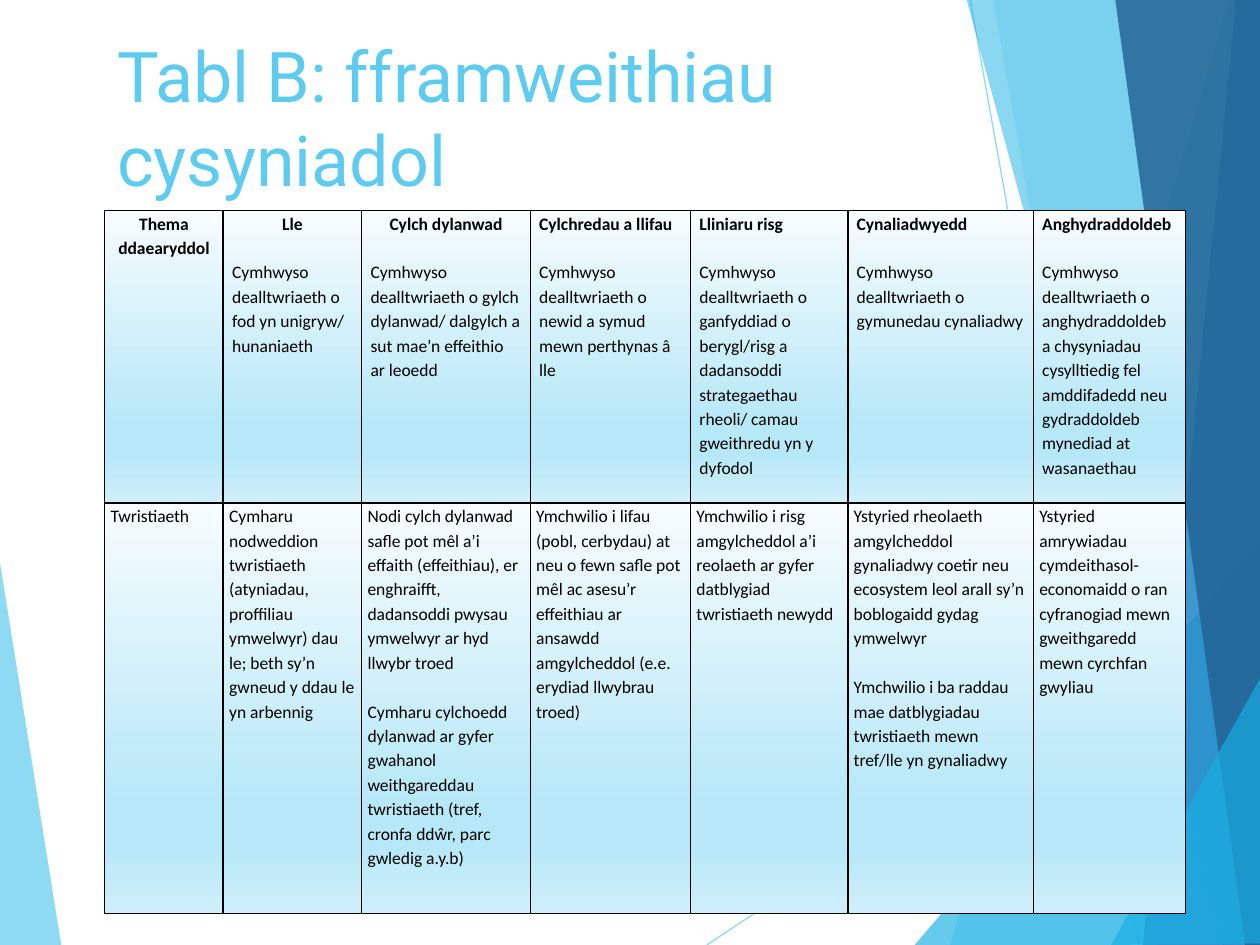
import pptx
import pptx.dml.color
import pptx.enum.shapes
import pptx.enum.text
import pptx.oxml
import pptx.oxml.ns
import pptx.util
from lxml import etree

Cm = pptx.util.Cm
Pt = pptx.util.Pt
RGBColor = pptx.dml.color.RGBColor
Align = pptx.enum.text.PP_ALIGN
qn = pptx.oxml.ns.qn

BLACK = RGBColor(0x00, 0x00, 0x00)
SKY = RGBColor(0x5F, 0xCB, 0xEF)
CYAN = RGBColor(0x17, 0xB0, 0xE4)
BLUE = RGBColor(0x2E, 0x83, 0xC3)
NAVY = RGBColor(0x22, 0x62, 0x92)
PALE = RGBColor(0xF7, 0xFC, 0xFE)
LIGHT = RGBColor(0xB7, 0xE8, 0xF8)
MIST = RGBColor(0xCF, 0xEF, 0xFA)
GRADIENT = [(0, PALE), (74, LIGHT), (83, LIGHT), (100, MIST)]

LEFT_FACET = ([(-0.03, 11.15), (1.24, 19.08), (-0.03, 19.05)], SKY, 70)
RIGHT_FACETS = [
    ([(24.77, 0), (19.15, 19.05), (25.45, 19.08), (25.43, 0.03)], SKY, 36),
    ([(20.02, -0.03), (23.34, 19.05), (25.43, 19.05), (25.43, -0.03)], SKY, 20),
    ([(18.44, 19.05), (25.4, 10.9), (25.43, 19.05)], CYAN, 66),
    ([(19.48, -0.03), (24.64, 19.05), (25.43, 19.02), (25.43, -0.03)], CYAN, 50),
    ([(24.92, -0.03), (23.04, 19.05), (25.43, 19.05), (25.4, -0.03)], BLUE, 70),
    ([(22.48, -0.03), (25.1, 19.05), (25.45, 19.05), (25.4, -0.03)], NAVY, 82),
    ([(22.4, 19.05), (25.45, 13.59), (25.45, 19.02)], CYAN, 66),
]
RAYS = [((14.25, 19.05), (25.43, 11.61)), ((19.56, 0), (22.96, 19.05))]

COLUMNS = [2.39, 2.79, 3.4, 3.23, 3.17, 3.74, 3.07]
ROWS = [5.9, 8.28]
CENTRED_HEADINGS = 3
HEADINGS = [
    ["Thema ddaearyddol"],
    ["Lle", "Cymhwyso dealltwriaeth o fod yn unigryw/ hunaniaeth"],
    ["Cylch dylanwad",
     "Cymhwyso dealltwriaeth o gylch dylanwad/ dalgylch a sut mae’n effeithio ar leoedd"],
    ["Cylchredau a llifau",
     "Cymhwyso dealltwriaeth o newid a symud mewn perthynas â lle"],
    ["Lliniaru risg",
     "Cymhwyso dealltwriaeth o ganfyddiad o berygl/risg a dadansoddi "
     "strategaethau rheoli/ camau gweithredu yn y dyfodol"],
    ["Cynaliadwyedd", "Cymhwyso dealltwriaeth o gymunedau cynaliadwy"],
    ["Anghydraddoldeb",
     "Cymhwyso dealltwriaeth o anghydraddoldeb a chysyniadau cysylltiedig fel "
     "amddifadedd neu gydraddoldeb mynediad at wasanaethau"],
]
TOURISM = [
    ["Twristiaeth"],
    ["Cymharu nodweddion twristiaeth (atyniadau, proffiliau ymwelwyr) dau le; "
     "beth sy’n gwneud y ddau le yn arbennig"],
    ["Nodi cylch dylanwad safle pot mêl a’i effaith (effeithiau), er enghraifft, "
     "dadansoddi pwysau ymwelwyr ar hyd llwybr troed",
     "Cymharu cylchoedd dylanwad ar gyfer gwahanol weithgareddau twristiaeth "
     "(tref, cronfa ddŵr, parc gwledig a.y.b)"],
    ["Ymchwilio i lifau (pobl, cerbydau) at neu o fewn safle pot mêl ac asesu’r "
     "effeithiau ar ansawdd amgylcheddol (e.e. erydiad llwybrau troed)"],
    ["Ymchwilio i risg amgylcheddol a’i reolaeth ar gyfer datblygiad twristiaeth newydd"],
    ["Ystyried rheolaeth amgylcheddol gynaliadwy coetir neu ecosystem leol arall "
     "sy’n boblogaidd gydag ymwelwyr",
     "Ymchwilio i ba raddau mae datblygiadau twristiaeth mewn tref/lle yn gynaliadwy"],
    ["Ystyried amrywiadau cymdeithasol-economaidd o ran cyfranogiad mewn "
     "gweithgaredd mewn cyrchfan gwyliau"],
]


def write(p, text, font="Calibri", size=10, color=BLACK, bold=False,
          align=Align.LEFT, spacing=None, before=0):
    p.alignment = align
    p.space_before = Pt(before)
    if spacing:
        p.line_spacing = spacing
    r = p.add_run()
    r.text = text
    r.font.name = font
    r.font.size = Pt(size)
    r.font.bold = bold
    r.font.color.rgb = color


def set_opacity(fill_parent, percent):
    for clr in fill_parent.iter(qn("a:srgbClr")):
        etree.SubElement(clr, qn("a:alpha"), val=str(percent * 1000))


class SlideBuilder:
    def __init__(self, s):
        self.s = s
        self.accent = SKY

    def facet(self, points, color, opacity):
        pts = [(Cm(x), Cm(y)) for x, y in points]
        fb = self.s.shapes.build_freeform(*pts[0])
        fb.add_line_segments(pts[1:], close=True)
        sp = fb.convert_to_shape()
        sp.shadow.inherit = False
        sp.fill.solid()
        sp.fill.fore_color.rgb = color
        set_opacity(sp.element.spPr, opacity)
        sp.line.fill.background()

    def ray(self, start, end):
        cx = self.s.shapes.add_connector(
            pptx.enum.shapes.MSO_CONNECTOR.STRAIGHT, *map(Cm, start + end))
        cx.line.color.rgb = self.accent
        cx.line.width = Pt(0.75)
        sp_pr = cx.element.spPr
        set_opacity(sp_pr, 70)
        etree.SubElement(sp_pr, qn("a:effectLst"))

    def title(self, text, left, top, width, height):
        sp = self.s.shapes.title
        sp.left, sp.top, sp.width, sp.height = map(Cm, (left, top, width, height))
        sp.element.getparent().append(sp.element)
        tf = sp.text_frame
        tf.word_wrap = True
        tf.auto_size = pptx.enum.text.MSO_AUTO_SIZE.NONE
        tf.vertical_anchor = pptx.enum.text.MSO_ANCHOR.BOTTOM
        write(tf.paragraphs[0], text, font="Roboto", size=40, color=self.accent)

    def cell(self, cell, texts, margin, heading=False, centred=False):
        cell.margin_left = cell.margin_right = Cm(margin)
        cell.margin_top = cell.margin_bottom = 0
        tf = cell.text_frame
        for i, text in enumerate(texts):
            p = tf.add_paragraph() if i else tf.paragraphs[0]
            first = i == 0
            write(p, text, bold=heading and first, spacing=1.15,
                  align=Align.CENTER if centred and first else Align.LEFT,
                  before=0 if first else 14)
        self.cell_format(cell)

    def cell_format(self, cell):
        tc_pr = cell.fill and cell.text_frame and cell._tc.get_or_add_tcPr()
        ns = pptx.oxml.ns.nsdecls("a")
        for side in "LRTB":
            tc_pr.append(pptx.oxml.parse_xml(
                f'<a:ln{side} {ns} w="12700"><a:solidFill>'
                f'<a:srgbClr val="{BLACK}"/></a:solidFill></a:ln{side}>'))
        stops = "".join(
            f'<a:gs pos="{pos * 1000}"><a:srgbClr val="{color}"/></a:gs>'
            for pos, color in GRADIENT)
        tc_pr.append(pptx.oxml.parse_xml(
            f'<a:gradFill {ns}><a:gsLst>{stops}</a:gsLst>'
            '<a:lin ang="5400000" scaled="0"/></a:gradFill>'))

    def table(self, left, top):
        table = self.s.shapes.add_table(
            len(ROWS), len(COLUMNS), Cm(left), Cm(top),
            Cm(sum(COLUMNS)), Cm(sum(ROWS))).table
        table.first_row = table.horz_banding = False
        for col, width in zip(table.columns, COLUMNS):
            col.width = Cm(width)
        for row, height in zip(table.rows, ROWS):
            row.height = Cm(height)
        for i, (heading, tourism) in enumerate(zip(HEADINGS, TOURISM)):
            self.cell(table.cell(0, i), heading, 0.18, heading=True,
                      centred=i < CENTRED_HEADINGS)
            self.cell(table.cell(1, i), tourism, 0.12)


def main():
    prs = pptx.Presentation()
    prs.slide_width, prs.slide_height = Cm(25.4), Cm(19.05)
    b = SlideBuilder(prs.slides.add_slide(prs.slide_layouts[5]))
    b.facet(*LEFT_FACET)
    for ray in RAYS:
        b.ray(*ray)
    for facet in RIGHT_FACETS:
        b.facet(*facet)
    b.title("Tabl B: fframweithiau cysyniadol", 2.11, 0.51, 17.63, 3.66)
    b.table(2.11, 4.24)
    prs.save("out.pptx")


if __name__ == "__main__":
    main()
